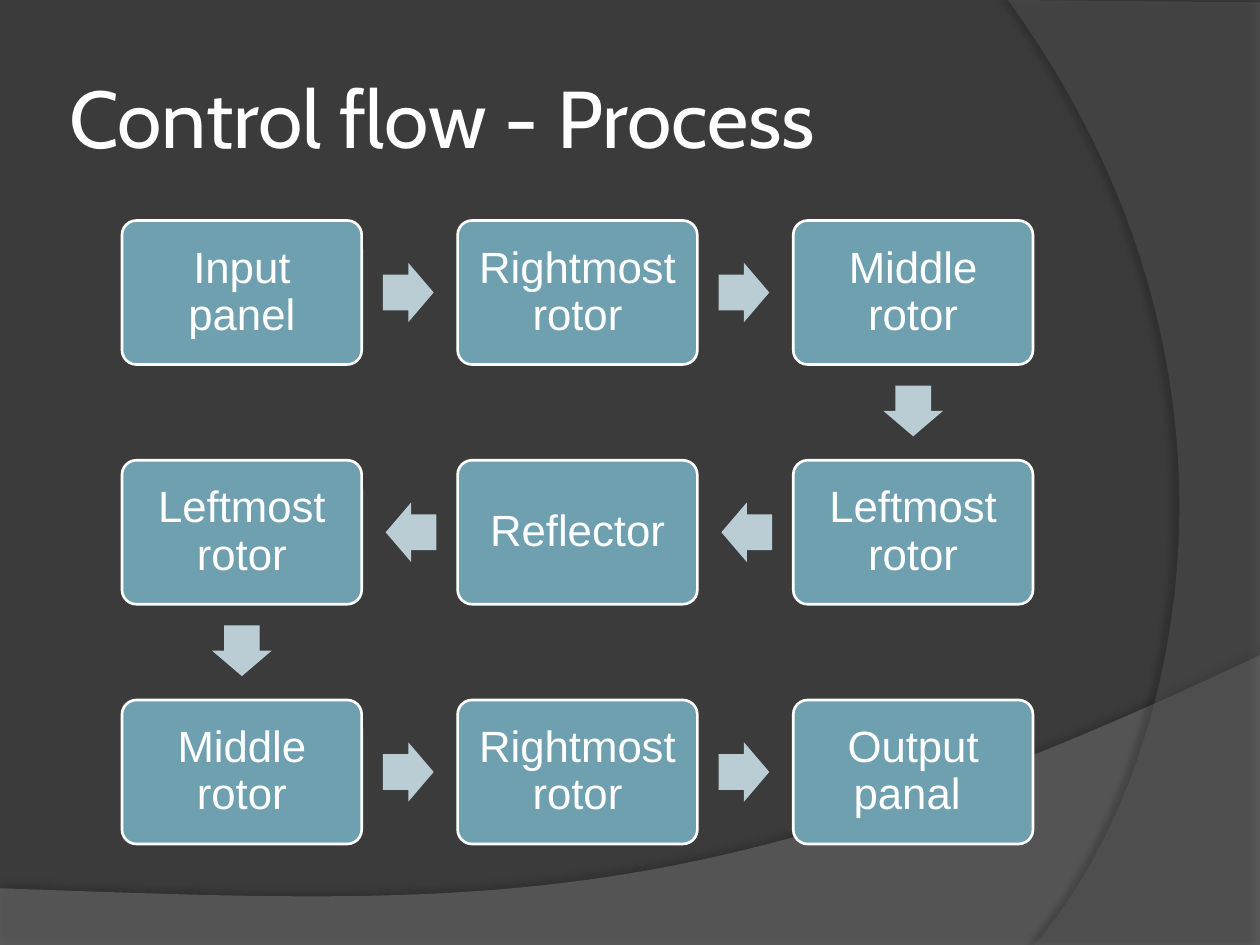
from lxml import etree
from pptx import Presentation
from pptx.dml.color import RGBColor
from pptx.enum.shapes import MSO_SHAPE
from pptx.enum.text import MSO_ANCHOR, PP_ALIGN
from pptx.oxml.ns import qn
from pptx.util import Pt

ROUNDED, ARROW = MSO_SHAPE.ROUNDED_RECTANGLE, MSO_SHAPE.RIGHT_ARROW
MIDDLE = MSO_ANCHOR.MIDDLE
LEFT, CENTER = PP_ALIGN.LEFT, PP_ALIGN.CENTER
TITLE_ONLY = 5

COLORS = {
    "background": "3B3B3B",
    "wave": "7F7F7F",
    "arc": "5E5E5E",
    "step": "6EA0B0",
    "arrow": "BACDD4",
    "text": "FFFFFF",
    "shadow": "000000",
}

# Flow grid, in points
COLUMNS = 3
GRID_LEFT, GRID_TOP = 69.7, 126
PITCH_X, PITCH_Y = 191.8, 137
STEP_WIDTH, STEP_HEIGHT = 137, 82.3
ARROW_LENGTH, ARROW_WIDTH = 29, 34
ARROW_SETBACK = 0.8

STEPS = [
    "Input panel", "Rightmost rotor", "Middle rotor",
    "Leftmost rotor", "Reflector", "Leftmost rotor",
    "Middle rotor", "Rightmost rotor", "Output panal ",
]


def color(name):
    return RGBColor.from_string(COLORS[name])


def bezier(start, control_1, control_2, end, count=48):
    """Points along a cubic curve, without its start."""
    points = []
    for index in range(1, count + 1):
        t = index / count
        weights = ((1 - t) ** 3, 3 * t * (1 - t) ** 2, 3 * t * t * (1 - t), t ** 3)
        corners = (start, control_1, control_2, end)
        points.append(tuple(sum(w * c[axis] for w, c in zip(weights, corners))
                            for axis in (0, 1)))
    return points


class FlowSlide:
    """Holds the style and the current slide."""

    title_format = {"size": Pt(46), "name": "Cabin", "bold": False}
    step_format = {"size": Pt(25), "name": "Arial", "bold": False}

    def __init__(self, deck):
        self.page = deck.slides.add_slide(deck.slide_layouts[TITLE_ONLY])
        fill = self.page.background.fill
        fill.solid()
        fill.fore_color.rgb = color("background")

    def paint(self, shape, fill_name):
        shape.shadow.inherit = False
        shape.fill.solid()
        shape.fill.fore_color.rgb = color(fill_name)
        shape.line.fill.background()

    def label(self, shape, text, font_format, align, margin):
        frame = shape.text_frame
        frame.word_wrap = True
        frame.vertical_anchor = MIDDLE
        for side in ("left", "top", "right", "bottom"):
            setattr(frame, f"margin_{side}", Pt(margin))
        para = frame.paragraphs[0]
        para.alignment = align
        span = para.add_run()
        span.text = text
        for key, value in font_format.items():
            setattr(span.font, key, value)
        span.font.color.rgb = color("text")
        return para

    def band(self, corners, controls, end, fill_name, opacity, shadow):
        """Translucent area with one curved edge and a soft shadow."""
        outline = corners + bezier(corners[-1], *controls, end)
        points = [(Pt(x), Pt(y)) for x, y in outline]
        builder = self.page.shapes.build_freeform(*points[0])
        builder.add_line_segments(points[1:], close=True)
        shape = builder.convert_to_shape()
        self.paint(shape, fill_name)
        properties = shape.element.spPr
        fill = properties.find(qn("a:solidFill"))[0]
        etree.SubElement(fill, qn("a:alpha"), val=str(opacity * 1000))
        shadow_opacity, blur, distance, angle = shadow
        outer = etree.SubElement(
            properties.find(qn("a:effectLst")), qn("a:outerShdw"),
            blurRad=str(Pt(blur)), dist=str(Pt(distance)),
            dir=str(angle * 60000), algn="ctr", rotWithShape="0")
        tint = etree.SubElement(outer, qn("a:srgbClr"), val=COLORS["shadow"])
        etree.SubElement(tint, qn("a:alpha"), val=str(shadow_opacity * 1000))
        return shape

    def title(self, text, above):
        box = self.page.shapes.title
        above.element.addnext(box.element)
        box.left, box.top, box.width, box.height = Pt(36), Pt(21.6), Pt(588), Pt(90)
        self.label(box, text, self.title_format, LEFT, 3.6)

    def step(self, text, center):
        x, y = center
        box = self.page.shapes.add_shape(
            ROUNDED, Pt(x - STEP_WIDTH / 2), Pt(y - STEP_HEIGHT / 2),
            Pt(STEP_WIDTH), Pt(STEP_HEIGHT))
        box.adjustments[0] = 0.1
        self.paint(box, "step")
        box.line.color.rgb = color("text")
        box.line.width = Pt(1.5)
        para = self.label(box, text, self.step_format, CENTER, 7.2)
        para.line_spacing = 0.9

    def arrow(self, start, end):
        """Block arrow halfway between two step centers."""
        dx, dy = end[0] - start[0], end[1] - start[1]
        distance = abs(dx) + abs(dy)
        x = (start[0] + end[0]) / 2 - ARROW_SETBACK * dx / distance
        y = (start[1] + end[1]) / 2 - ARROW_SETBACK * dy / distance
        shape = self.page.shapes.add_shape(
            ARROW, Pt(x - ARROW_LENGTH / 2), Pt(y - ARROW_WIDTH / 2),
            Pt(ARROW_LENGTH), Pt(ARROW_WIDTH))
        shape.adjustments[0], shape.adjustments[1] = 0.6, 0.5
        shape.rotation = 90 if dy else 0 if dx > 0 else 180
        self.paint(shape, "arrow")


def step_center(index):
    """Rows run alternately rightward and leftward."""
    row, column = divmod(index, COLUMNS)
    if row % 2:
        column = COLUMNS - 1 - column
    return (GRID_LEFT + STEP_WIDTH / 2 + column * PITCH_X,
            GRID_TOP + STEP_HEIGHT / 2 + row * PITCH_Y)


def main():
    deck = Presentation()
    deck.slide_width, deck.slide_height = Pt(720), Pt(540)
    flow = FlowSlide(deck)

    # Background bands
    flow.band([(0, 507.6), (0, 540), (720, 540), (720, 374.4)],
              [(402.5, 524.9), (281.5, 517.7)], (0, 507.6),
              "wave", 45, (35, 4, 3.5, 270))
    arc = flow.band([(720, 1.4), (720, 540), (591.1, 540)],
                    [(673.2, 445.7), (733, 216)], (576, 0),
                    "arc", 40, (45, 4, 4, 180))

    flow.title("Control flow - Process", above=arc)

    # Steps and the arrows between them
    centers = [step_center(index) for index in range(len(STEPS))]
    for text, center in zip(STEPS, centers):
        flow.step(text, center)
    for start, end in zip(centers, centers[1:]):
        flow.arrow(start, end)

    deck.save("out.pptx")


if __name__ == "__main__":
    main()
